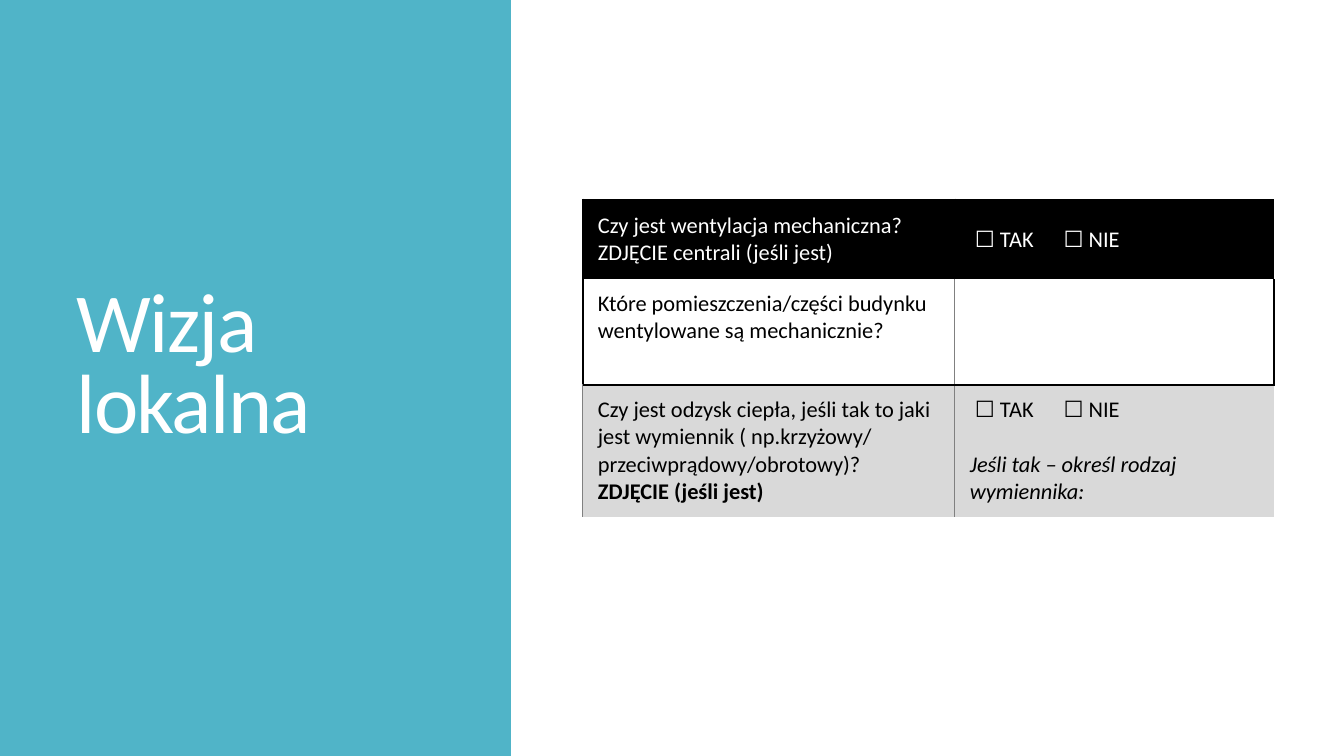
from dataclasses import dataclass, field

import lxml.etree
import pptx
import pptx.dml.color
import pptx.enum.shapes
import pptx.enum.text
import pptx.oxml.ns
import pptx.util
from pptx.util import Inches

TEAL, WHITE, BLACK, GREY, PALE = "50B4C8", "FFFFFF", "000000", "808080", "D9D9D9"
ANCHOR = pptx.enum.text.MSO_ANCHOR
CHECKBOXES = " ☐ TAK\t☐ NIE"
THICK, THIN = (BLACK, 1.5), (GREY, 0.5)


@dataclass
class Line:
    text: str
    bold: bool = False
    italic: bool = False
    space_before: float = 0
    tab: float = 0


@dataclass
class Answer:
    lines: list[Line]
    borders: dict[str, tuple[str, float]]
    color: str = BLACK
    fill: str = ""
    anchor: ANCHOR = ANCHOR.TOP


@dataclass
class Question:
    height: float
    cells: list[Answer] = field(default_factory=list)


def paint(target, color: str) -> None:
    target.solid()
    target.fore_color.rgb = pptx.dml.color.RGBColor.from_string(color)


def add_child(parent, tag: str, **attributes: str):
    return lxml.etree.SubElement(parent, pptx.oxml.ns.qn(tag), attributes)


def write(paragraph, text: str, *, size: float, color: str, bold: bool = False,
          italic: bool = False, space_before: float = 0, tab: float = 0,
          spacing: int = 0, line_spacing: float = 1.0) -> None:
    paragraph.alignment = pptx.enum.text.PP_ALIGN.LEFT
    paragraph.line_spacing = line_spacing
    paragraph.space_before = pptx.util.Pt(space_before)
    if tab:
        stops = add_child(paragraph._p.get_or_add_pPr(), "a:tabLst")
        add_child(stops, "a:tab", pos=str(Inches(tab)), algn="l")
    run = paragraph.add_run()
    run.text = text
    run.font.name = "Calibri"
    run.font.size = pptx.util.Pt(size)
    run.font.bold, run.font.italic = bold, italic
    paint(run.font.fill, color)
    if spacing:
        run.font._element.set("spc", str(spacing))


def add_panel(slide, left: float, width: float, color: str):
    panel = slide.shapes.add_shape(pptx.enum.shapes.MSO_SHAPE.RECTANGLE,
                                   Inches(left), 0, Inches(width), Inches(7.5))
    panel.shadow.inherit = False
    paint(panel.fill, color)
    panel.line.fill.background()
    return panel


def draw_borders(cell, borders: dict[str, tuple[str, float]]) -> None:
    properties = cell._tc.get_or_add_tcPr()
    for side in "LRTB":
        color, width = borders.get(side, ("", 0))
        edge = add_child(properties, f"a:ln{side}", w=str(pptx.util.Pt(width)))
        if color:
            add_child(add_child(edge, "a:solidFill"), "a:srgbClr", val=color)
        else:
            add_child(edge, "a:noFill")


def fill_cell(cell, answer: Answer) -> None:
    cell.margin_left, cell.margin_right = Inches(0.15), Inches(0.09)
    cell.margin_top = cell.margin_bottom = Inches(0.11)
    cell.vertical_anchor = answer.anchor
    draw_borders(cell, answer.borders)
    if answer.fill:
        paint(cell.fill, answer.fill)
    else:
        cell.fill.background()
    for number, line in enumerate(answer.lines):
        paragraph = cell.text_frame.add_paragraph() if number else cell.text_frame.paragraphs[0]
        write(paragraph, line.text, size=16, color=answer.color, bold=line.bold,
              italic=line.italic, space_before=line.space_before, tab=line.tab)


def add_survey(slide, questions: list[Question], widths: list[float]) -> None:
    frame = slide.shapes.add_table(len(questions), len(widths), Inches(5.78), Inches(1.98),
                                   Inches(sum(widths)), Inches(sum(q.height for q in questions)))
    survey = frame.table
    survey.first_row = survey.horz_banding = False
    for column, width in zip(survey.columns, widths):
        column.width = Inches(width)
    for row, question in zip(survey.rows, questions):
        row.height = Inches(question.height)
        for cell, answer in zip(row.cells, question.cells):
            fill_cell(cell, answer)


QUESTIONS = [
    Question(0.79, [
        Answer([Line("Czy jest wentylacja mechaniczna? ZDJĘCIE centrali (jeśli jest)")],
               {"L": THICK, "T": THICK, "R": THICK}, WHITE, BLACK, ANCHOR.MIDDLE),
        Answer([Line(CHECKBOXES, tab=0.93)],
               {"L": THICK, "T": THICK}, WHITE, BLACK, ANCHOR.MIDDLE),
    ]),
    Question(1.05, [
        Answer([Line("Które pomieszczenia/części budynku wentylowane są mechanicznie?")],
               {"L": THICK, "R": THIN, "B": THICK}),
        Answer([], {"L": THIN, "R": THICK, "B": THICK}),
    ]),
    Question(1.31, [
        Answer([Line("Czy jest odzysk ciepła, jeśli tak to jaki jest wymiennik "
                     "( np.krzyżowy/ przeciwprądowy/obrotowy)?"),
                Line("ZDJĘCIE (jeśli jest)", bold=True)],
               {"L": THIN, "T": THICK, "R": THIN}, fill=PALE),
        Answer([Line(CHECKBOXES, tab=0.93),
                Line("Jeśli tak – określ rodzaj wymiennika:", italic=True, space_before=19.5)],
               {"L": THIN, "T": THICK}, fill=PALE),
    ]),
]


def main() -> None:
    deck = pptx.Presentation()
    deck.slide_width, deck.slide_height = Inches(13.33), Inches(7.5)
    slide = deck.slides.add_slide(deck.slide_layouts[5])

    # Teal backdrop behind the title, white panel on the right
    paint(slide.background.fill, TEAL)
    backdrop = add_panel(slide, 0, 13.33, TEAL)
    slide.shapes.title._element.addprevious(backdrop._element)
    add_panel(slide, 5.07, 8.26, WHITE)

    # Title
    heading = slide.shapes.title
    heading.left, heading.top = Inches(0.66), Inches(0.84)
    heading.width, heading.height = Inches(3.79), Inches(3.67)
    heading.text_frame.word_wrap = True
    heading.text_frame.auto_size = pptx.enum.text.MSO_AUTO_SIZE.NONE
    heading.text_frame.vertical_anchor = ANCHOR.BOTTOM
    write(heading.text_frame.paragraphs[0], "Wizja lokalna", size=60, color=WHITE,
          spacing=-120, line_spacing=0.8)

    # Ventilation survey
    add_survey(slide, QUESTIONS, [3.69, 3.17])
    deck.save("out.pptx")


if __name__ == "__main__":
    main()
